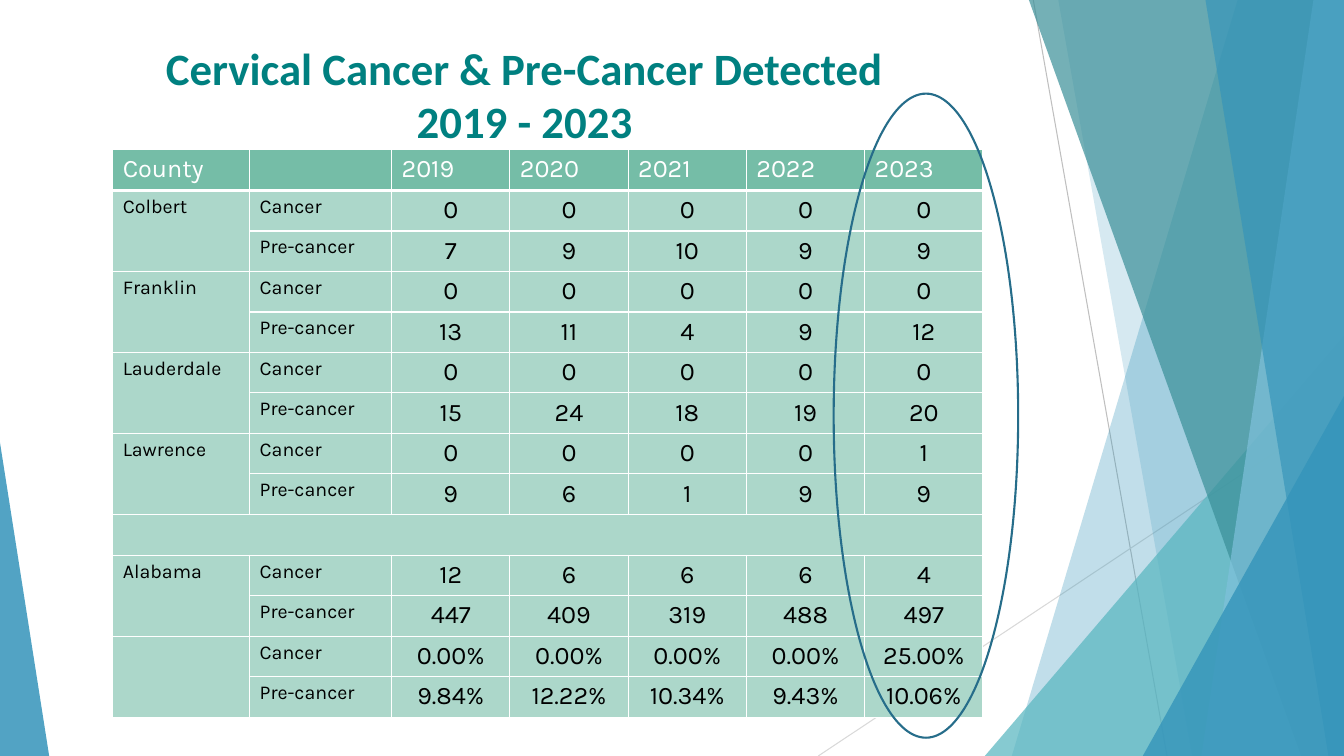
"""Build the slide on cervical cancer and pre-cancer detected by county, 2019 to 2023."""
from dataclasses import dataclass

from lxml.etree import SubElement
from pptx import Presentation
from pptx.dml.color import RGBColor
from pptx.enum.shapes import MSO_CONNECTOR, MSO_SHAPE
from pptx.enum.text import MSO_ANCHOR, MSO_AUTO_SIZE, PP_ALIGN
from pptx.oxml.ns import qn
from pptx.util import Cm, Pt

WIDTH, HEIGHT = 33.87, 19.05
WHITE = RGBColor(0xFF, 0xFF, 0xFF)
BLACK = RGBColor(0x00, 0x00, 0x00)
TEAL = RGBColor(0x00, 0x80, 0x80)
BLUE = RGBColor(0x34, 0x94, 0xBA)
AQUA = RGBColor(0x58, 0xB6, 0xC0)
DEEP_AQUA = RGBColor(0x3A, 0x8F, 0x98)
SKY = RGBColor(0x7F, 0xC1, 0xDB)
OUTLINE = RGBColor(0x26, 0x6D, 0x8A)
HEADER_GREEN = RGBColor(0x75, 0xBD, 0xA7)
BODY_GREEN = RGBColor(0xAC, 0xD7, 0xCA)
GREY = RGBColor(0xBF, 0xBF, 0xBF)
LIGHT_GREY = RGBColor(0xD9, 0xD9, 0xD9)


@dataclass(frozen=True)
class Ray:
    start: tuple[float, float]
    end: tuple[float, float]
    color: RGBColor


@dataclass(frozen=True)
class Panel:
    top_x: float
    bottom_x: float
    color: RGBColor
    opacity: int


@dataclass(frozen=True)
class Wedge:
    left: float
    top: float
    width: float
    apex: float
    color: RGBColor
    opacity: int


@dataclass(frozen=True)
class Region:
    name: str
    cancer: str
    pre_cancer: str


RAYS = (
    Ray((26.04, 0), (29.41, HEIGHT), GREY),
    Ray((WIDTH, 10.24), (20.62, HEIGHT), LIGHT_GREY),
)
FACETS = (
    Panel(31.19, 25.5, BLUE, 30),
    Panel(26.67, 30.05, BLUE, 20),
    Wedge(24.82, 8.46, 9.05, 1, AQUA, 72),
    Panel(25.93, 32.79, DEEP_AQUA, 70),
    Panel(33.1, 30.28, SKY, 70),
    Panel(30.38, 33.48, BLUE, 65),
    Wedge(28.8, 9.98, 5.07, 1, BLUE, 80),
    Wedge(0, 11.15, 1.24, 0, BLUE, 85),
)
HEADINGS = ("County", "", "2019", "2020", "2021", "2022", "2023")
COUNTIES = (
    Region("Colbert", "0 0 0 0 0", "7 9 10 9 9"),
    Region("Franklin", "0 0 0 0 0", "13 11 4 9 12"),
    Region("Lauderdale", "0 0 0 0 0", "15 24 18 19 20"),
    Region("Lawrence", "0 0 0 0 1", "9 6 1 9 9"),
)
STATE = (
    Region("Alabama", "12 6 6 6 4", "447 409 319 488 497"),
    Region("", "0.00% 0.00% 0.00% 0.00% 25.00%", "9.84% 12.22% 10.34% 9.43% 10.06%"),
)
COLUMN_WIDTHS = (3.45, 3.58) + (2.98,) * 5
ROW_HEIGHT = 1.02


def draw_ray(slide, ray: Ray) -> None:
    points = [Cm(value) for value in ray.start + ray.end]
    connector = slide.shapes.add_connector(MSO_CONNECTOR.STRAIGHT, *points)
    connector.line.color.rgb = ray.color
    connector.line.width = Pt(0.75)
    SubElement(connector.element.spPr, qn("a:effectLst"))


def draw_facet(slide, facet: Panel | Wedge) -> None:
    if isinstance(facet, Panel):
        builder = slide.shapes.build_freeform(Cm(facet.top_x), 0)
        corners = ((WIDTH, 0), (WIDTH, HEIGHT), (facet.bottom_x, HEIGHT))
        builder.add_line_segments([(Cm(x), Cm(y)) for x, y in corners], close=True)
        shape = builder.convert_to_shape()
    else:
        shape = slide.shapes.add_shape(
            MSO_SHAPE.ISOSCELES_TRIANGLE, Cm(facet.left), Cm(facet.top),
            Cm(facet.width), Cm(HEIGHT - facet.top))
        shape.adjustments[0] = facet.apex
    shape.shadow.inherit = False
    shape.line.fill.background()
    shape.fill.solid()
    shape.fill.fore_color.rgb = facet.color
    color = shape.element.spPr.find(qn("a:solidFill")).find(qn("a:srgbClr"))
    SubElement(color, qn("a:alpha"), val=str(facet.opacity * 1000))


def draw_title(slide) -> None:
    title = slide.shapes.title
    title.left, title.top, title.width, title.height = Cm(0.33), Cm(0.89), Cm(25.78), Cm(2.9)
    frame = title.text_frame
    frame.text = "Cervical Cancer & Pre-Cancer Detected\v2019 - 2023"
    frame.auto_size = MSO_AUTO_SIZE.NONE
    frame.vertical_anchor = MSO_ANCHOR.TOP
    paragraph = frame.paragraphs[0]
    paragraph.alignment = PP_ALIGN.CENTER
    for run in paragraph.runs:
        run.font.name, run.font.size, run.font.bold = "Calibri", Pt(32), True
        run.font.color.rgb = TEAL


def format_cell(cell, text: str, is_header: bool, is_count: bool) -> None:
    properties = cell._tc.get_or_add_tcPr()
    for side in "LRTB":
        weight = 3 if is_header and side == "B" else 1
        border = SubElement(properties, qn(f"a:ln{side}"), w=str(Pt(weight)))
        SubElement(SubElement(border, qn("a:solidFill")), qn("a:srgbClr"), val=str(WHITE))
    cell.fill.solid()
    cell.fill.fore_color.rgb = HEADER_GREEN if is_header else BODY_GREEN
    cell.text_frame.text = text
    paragraph = cell.text_frame.paragraphs[0]
    paragraph.alignment = PP_ALIGN.CENTER if is_count and not is_header else PP_ALIGN.LEFT
    for run in paragraph.runs:
        run.font.name = "Karla"
        run.font.size = Pt(18 if is_header or is_count else 14)
        run.font.bold = False
        run.font.color.rgb = WHITE if is_header else BLACK


def region_rows(regions: tuple[Region, ...]) -> list[tuple[str, ...]]:
    rows = []
    for region in regions:
        rows.append((region.name, "Cancer", *region.cancer.split()))
        rows.append(("", "Pre-cancer", *region.pre_cancer.split()))
    return rows


def draw_detections(slide) -> None:
    county_rows, state_rows = region_rows(COUNTIES), region_rows(STATE)
    divider = 1 + len(county_rows)
    rows = [HEADINGS, *county_rows, ("",) * len(HEADINGS), *state_rows]
    table = slide.shapes.add_table(
        len(rows), len(HEADINGS), Cm(2.84), Cm(3.77),
        Cm(sum(COLUMN_WIDTHS)), Cm(ROW_HEIGHT * len(rows))).table
    for column, width in zip(table.columns, COLUMN_WIDTHS):
        column.width = Cm(width)
    for row_index, texts in enumerate(rows):
        table.rows[row_index].height = Cm(ROW_HEIGHT)
        for column_index, text in enumerate(texts):
            format_cell(table.cell(row_index, column_index), text,
                        row_index == 0, column_index > 1)
    for first in (*range(1, divider, 2), *range(divider + 1, len(rows), 2)):
        table.cell(first, 0).merge(table.cell(first + 1, 0))
    table.cell(divider, 0).merge(table.cell(divider, len(HEADINGS) - 1))


def draw_latest_year_ring(slide) -> None:
    ring = slide.shapes.add_shape(MSO_SHAPE.OVAL, Cm(21.01), Cm(2.36), Cm(4.65), Cm(16.23))
    ring.shadow.inherit = False
    ring.fill.background()
    ring.line.color.rgb = OUTLINE
    ring.line.width = Pt(1.5)


def main() -> None:
    presentation = Presentation()
    presentation.slide_width, presentation.slide_height = Cm(WIDTH), Cm(HEIGHT)
    slide = presentation.slides.add_slide(presentation.slide_layouts[5])
    for ray in RAYS:
        draw_ray(slide, ray)
    for facet in FACETS:
        draw_facet(slide, facet)
    draw_title(slide)
    draw_detections(slide)
    draw_latest_year_ring(slide)
    presentation.save("out.pptx")


if __name__ == "__main__":
    main()
